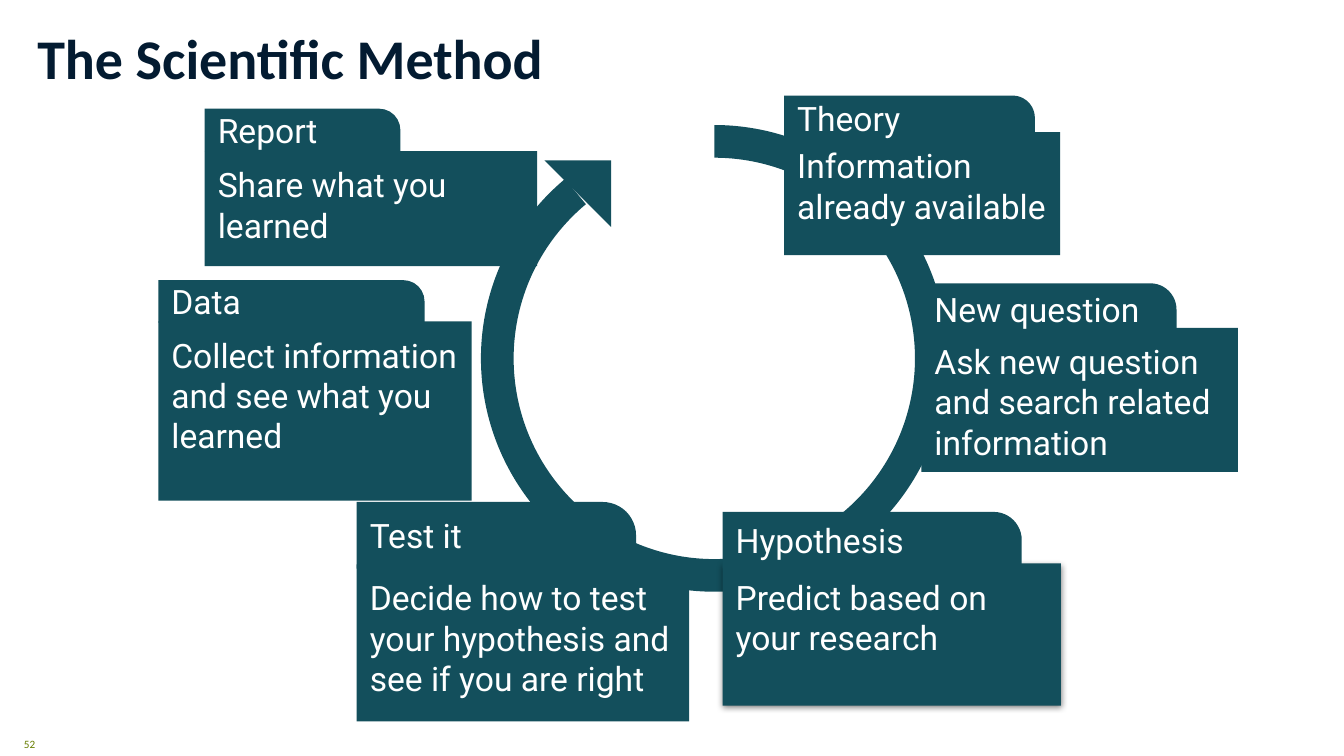
from dataclasses import dataclass

from lxml import etree
from pptx import Presentation
from pptx.dml.color import RGBColor
from pptx.enum.shapes import MSO_SHAPE
from pptx.enum.text import MSO_ANCHOR, PP_ALIGN
from pptx.oxml.ns import qn
from pptx.util import Cm, Pt

RECTANGLE = MSO_SHAPE.RECTANGLE
FOLDER_TAB = MSO_SHAPE.ROUND_1_RECTANGLE
ARC = MSO_SHAPE.BLOCK_ARC
TRIANGLE = MSO_SHAPE.RIGHT_TRIANGLE
TOP, MIDDLE, BOTTOM = MSO_ANCHOR.TOP, MSO_ANCHOR.MIDDLE, MSO_ANCHOR.BOTTOM
LEFT, RIGHT = PP_ALIGN.LEFT, PP_ALIGN.RIGHT


@dataclass(frozen=True)
class Theme:
    teal: RGBColor = RGBColor(0x13, 0x4F, 0x5C)
    white: RGBColor = RGBColor(0xFF, 0xFF, 0xFF)
    navy: RGBColor = RGBColor(0x03, 0x1B, 0x31)
    olive: RGBColor = RGBColor(0x68, 0x7F, 0x00)
    title_size: Pt = Pt(40)
    folder_size: Pt = Pt(24)
    number_size: Pt = Pt(8)
    heading_font: str = "Calibri"
    folder_font: str = "Roboto"


theme = Theme()


def add_teal_shape(parent, kind, left, top, width, height):
    shape = parent.shapes.add_shape(kind, Cm(left), Cm(top), Cm(width), Cm(height))
    shape.shadow.inherit = False
    shape.fill.solid()
    shape.fill.fore_color.rgb = theme.teal
    shape.line.fill.background()
    return shape


def write_text(shape, text, font, size, color, anchor, align=LEFT, bold=False,
               inset_x=0.33, inset_y=0.33):
    frame = shape.text_frame
    layout = {
        "word_wrap": True, "vertical_anchor": anchor,
        "margin_left": Cm(inset_x), "margin_right": Cm(inset_x),
        "margin_top": Cm(inset_y), "margin_bottom": Cm(inset_y),
    }
    for name, value in layout.items():
        setattr(frame, name, value)
    para = frame.paragraphs[0]
    para.alignment = align
    span = para.add_run()
    span.text = text
    for name, value in {"name": font, "size": size, "bold": bold}.items():
        setattr(span.font, name, value)
    span.font.color.rgb = color


deck = Presentation()
deck.slide_width, deck.slide_height = Cm(33.87), Cm(19.05)
page = deck.slides.add_slide(deck.slide_layouts[6])

# Slide number and title
number_box = page.shapes.add_textbox(Cm(0), Cm(18.42), Cm(1.14), Cm(0.64))
write_text(number_box, "52", theme.heading_font, theme.number_size, theme.olive,
           MIDDLE, RIGHT, inset_x=0.25, inset_y=0.13)
title_box = page.shapes.add_textbox(Cm(0.69), Cm(0.69), Cm(26.04), Cm(1.73))
write_text(title_box, "The Scientific Method", theme.heading_font, theme.title_size,
           theme.navy, BOTTOM, bold=True, inset_x=0.25, inset_y=0.13)

# Circular arrow
cycle = page.shapes.add_group_shape()
ring = add_teal_shape(cycle, ARC, 12.12, 3.15, 11.76, 11.76)
for index, value in enumerate((54, 30.13, 0.07)):
    ring.adjustments[index] = value
arrowhead = add_teal_shape(cycle, TRIANGLE, 13.72, 4.04, 1.68, 1.68)
for part in (ring, arrowhead):
    part.rotation = 180

# Folders: heading, text, left, (tab top, width, height), (body top, width, height)
folders = [
    ("Theory", "Information already available",
     19.76, (2.41, 6.32, 1.12), (3.33, 6.96, 3.1)),
    ("Report", "Share what you learned",
     5.16, (2.74, 4.93, 1.07), (3.81, 8.38, 2.9)),
    ("Data", "Collect information and see what you learned",
     3.99, (7.06, 6.71, 1.07), (8.1, 7.9, 4.52)),
    ("Test it", "Decide how to test your hypothesis and see if you are right",
     8.99, (12.65, 7.04, 1.68), (14.22, 8.38, 3.96)),
    ("Hypothesis", "Predict based on your research",
     18.21, (12.9, 7.54, 1.42), (14.2, 8.53, 3.58)),
    ("New question", "Ask new question and search related information",
     23.22, (7.14, 6.43, 1.32), (8.26, 7.98, 3.63)),
]
folder_bodies = {}
for heading, text, left, tab_area, body_area in folders:
    folder = page.shapes.add_group_shape()
    body = add_teal_shape(folder, RECTANGLE, left, *body_area)
    tab = add_teal_shape(folder, FOLDER_TAB, left, *tab_area)
    tab.adjustments[0] = 0.5
    for shape, words, anchor in ((body, text, TOP), (tab, heading, MIDDLE)):
        write_text(shape, words, theme.folder_font, theme.folder_size, theme.white, anchor)
    folder_bodies[heading] = body

# Soft shadow under the hypothesis folder
effects = folder_bodies["Hypothesis"].element.spPr.find(qn("a:effectLst"))
shadow = etree.SubElement(effects, qn("a:outerShdw"), blurRad=str(Pt(4.5)),
                          dist=str(Pt(1.5)), dir="5400000", algn="bl", rotWithShape="0")
shadow_color = etree.SubElement(shadow, qn("a:srgbClr"), val="000000")
etree.SubElement(shadow_color, qn("a:alpha"), val="50000")

deck.save("out.pptx")
